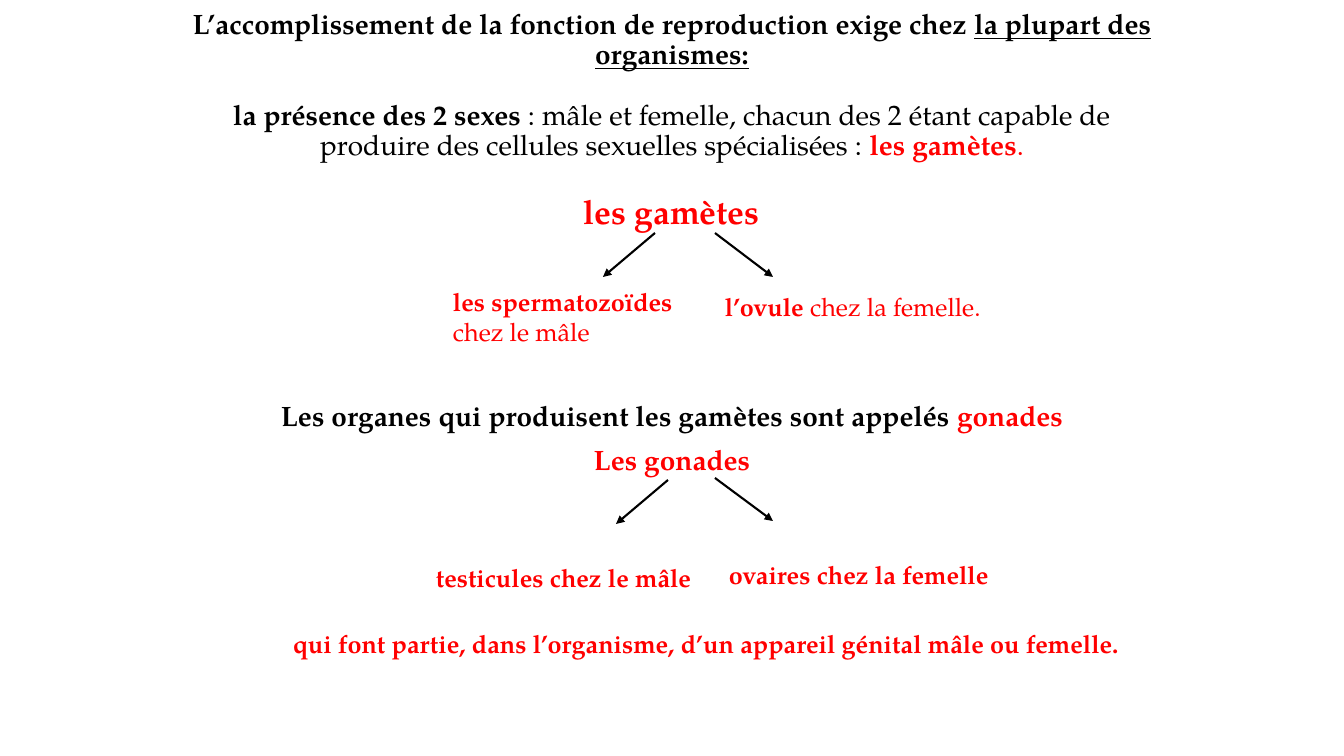
from lxml.etree import SubElement
from pptx import Presentation
from pptx.dml.color import RGBColor
from pptx.enum.shapes import MSO_CONNECTOR as Connector
from pptx.enum.text import MSO_ANCHOR as Anchor, PP_ALIGN as Align
from pptx.oxml.ns import qn
from pptx.util import Pt

BLACK = RGBColor(0, 0, 0)
RED = RGBColor(255, 0, 0)
WHITE = RGBColor(255, 255, 255)


def px(length):
    return round(length * 914400 / 100.8)


def add_run(paragraph, text, font="TeX Gyre Pagella", size=18, color=RED, bold=True, underline=False):
    run = paragraph.add_run()
    run.text = text
    run.font.name = font
    run.font.size = Pt(size)
    run.font.color.rgb = color
    run.font.bold = bold
    run.font.underline = underline


class Lesson:
    arrow_color = BLACK
    arrow_width = Pt(1.5)

    def __init__(self):
        self.deck = Presentation()
        self.deck.slide_width = px(1344)
        self.deck.slide_height = px(756)
        self.slide = self.deck.slides.add_slide(self.deck.slide_layouts[6])
        self.slide.background.fill.solid()
        self.slide.background.fill.fore_color.rgb = WHITE

    def text(self, left, top, width, height, *paragraphs, align=Align.LEFT, spacing=1.0, gap=0, **style):
        frame = self.slide.shapes.add_textbox(px(left), px(top), px(width), px(height)).text_frame
        frame.word_wrap = True
        frame.vertical_anchor = Anchor.TOP
        for index, runs in enumerate(paragraphs):
            paragraph = frame.add_paragraph() if index else frame.paragraphs[0]
            paragraph.alignment = align
            paragraph.line_spacing = spacing
            paragraph.space_before = Pt(gap if index else 0)
            for words, changes in runs:
                add_run(paragraph, words, **{**style, **changes})

    def arrow(self, x1, y1, x2, y2):
        arrow = self.slide.shapes.add_connector(Connector.STRAIGHT, px(x1), px(y1), px(x2), px(y2))
        arrow.line.color.rgb = self.arrow_color
        arrow.line.width = self.arrow_width
        SubElement(arrow.line._get_or_add_ln(), qn("a:tailEnd"), type="triangle")
        SubElement(arrow._element.spPr, qn("a:effectLst"))

    def save(self):
        self.deck.save("out.pptx")


def main():
    lesson = Lesson()
    lesson.text(
        168, 5, 1008, 165,
        [("L’accomplissement de la fonction de reproduction exige chez ", {}),
         ("la plupart des organismes:", {"underline": True})],
        [("la présence des 2 sexes", {}),
         (" : mâle et femelle, chacun des 2 étant capable de produire des cellules sexuelles spécialisées : ",
          {"bold": False}),
         ("les gamètes", {"color": RED}),
         (".", {"color": RED, "bold": False})],
        align=Align.CENTER, spacing=0.9, gap=22, size=20, color=BLACK)
    lesson.text(
        168, 397, 1008, 95,
        [("Les organes qui produisent les gamètes sont appelés ", {"color": BLACK}), ("gonades", {})],
        [("Les gonades", {})],
        align=Align.CENTER, spacing=0.9, gap=10, size=20)
    lesson.text(336, 186, 671, 50, [("les gamètes", {})], align=Align.CENTER, size=24)
    lesson.text(443, 281, 288, 72, [("les spermatozoïdes", {}), (" chez le mâle", {"bold": False})])
    lesson.text(715, 282, 400, 43, [("l’ovule", {}), (" chez la femelle.", {"bold": False})],
                align=Align.JUSTIFY, spacing=1.15)
    lesson.text(426, 557, 290, 40, [("testicules chez le mâle", {})])
    lesson.text(719, 554, 300, 40, [("ovaires chez la femelle", {})])
    lesson.text(283, 619, 887, 43,
                [("qui font partie, dans l’organisme, d’un appareil génital mâle ou femelle.", {})],
                align=Align.JUSTIFY, spacing=1.15)

    for ends in ((715, 233, 773, 277), (655, 233, 603, 277),
                 (668, 480, 616, 524), (715, 478, 773, 521)):
        lesson.arrow(*ends)
    lesson.save()


if __name__ == "__main__":
    main()
